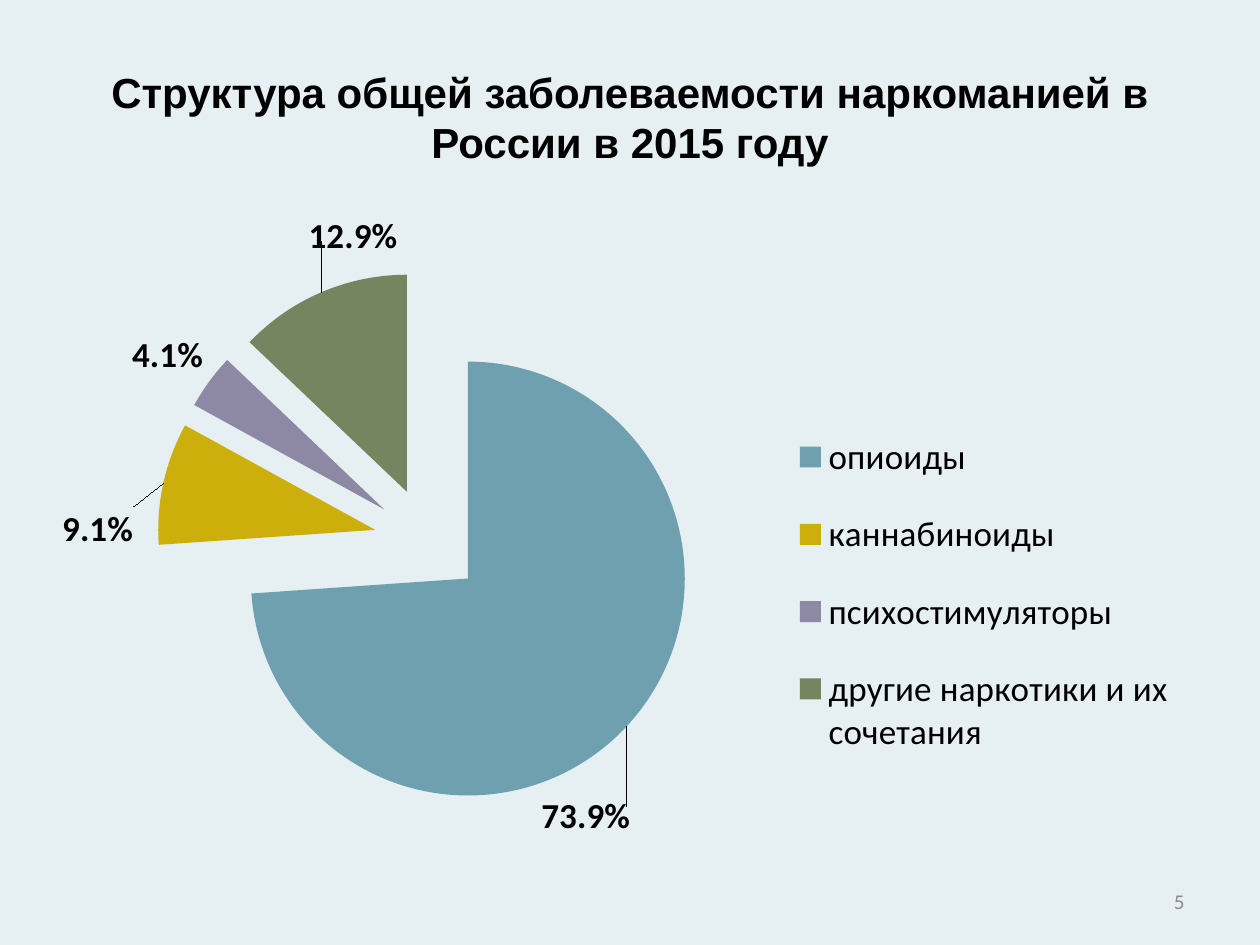
"""Build a slide with an exploded pie chart of drug addiction morbidity."""
from lxml.etree import SubElement
from pptx import Presentation
from pptx.chart.data import CategoryChartData as ChartData
from pptx.dml.color import RGBColor as Color
from pptx.enum.chart import XL_CHART_TYPE as ChartType
from pptx.enum.chart import XL_LABEL_POSITION as LabelPosition
from pptx.enum.chart import XL_LEGEND_POSITION as LegendPosition
from pptx.enum.text import MSO_ANCHOR as Anchor
from pptx.enum.text import PP_ALIGN as Align
from pptx.oxml.ns import qn
from pptx.util import Cm, Pt

TITLE = "Структура общей заболеваемости наркоманией в России в 2015 году"
PAGE = "5"
SLICES = [
    ("опиоиды", 0.739, "6EA0B0", (-0.08, 0.12)),
    ("каннабиноиды", 0.091, "CCAF0A", (-0.02, 0.11)),
    ("психостимуляторы", 0.041, "8D89A4", None),
    ("другие наркотики и их сочетания", 0.129, "748560", (0.07, -0.07)),
]
EXPLOSION = 25
PLOT_BOX = (0.09, 0.09, 0.48, 0.87)
LEGEND_BOX = (0.65, 0.3, 0.34, 0.62)
THEME = {
    "background": "E6EFF2",
    "title": {"name": "Arial", "size": Pt(24), "bold": True, "color": "000000"},
    "page": {"name": "Calibri", "size": Pt(12), "color": "8C8C8C"},
    "chart": {"name": "Calibri", "size": Pt(10), "color": "000000"},
    "label": {"name": "Calibri", "size": Pt(20), "bold": True, "color": "000000"},
    "legend": {"name": "Calibri", "size": Pt(20), "color": "000000"},
}
BOXES = {
    "title": (Cm(1.27), Cm(0.76), Cm(22.86), Cm(3.18)),
    "page": (Cm(18.2), Cm(17.65), Cm(5.93), Cm(1.02)),
    "chart": (Cm(1.09), Cm(4.32), Cm(22.86), Cm(12.57)),
}


def format_font(font, role):
    for name, value in THEME[role].items():
        if name == "color":
            font.color.rgb = Color.from_string(value)
        else:
            setattr(font, name, value)


def write_text(shape, text, role, align):
    shape.left, shape.top, shape.width, shape.height = BOXES[role]
    frame = shape.text_frame
    frame.word_wrap = True
    frame.vertical_anchor = Anchor.MIDDLE
    paragraph = frame.paragraphs[0]
    paragraph.alignment = align
    run = paragraph.add_run()
    run.text = text
    format_font(run.font, role)


def set_layout(element, previous, values):
    for old in element.findall(qn("c:layout")):
        element.remove(old)
    layout = SubElement(element, qn("c:layout"))
    manual = SubElement(layout, qn("c:manualLayout"))
    if len(values) == 4:
        if previous is None:
            SubElement(manual, qn("c:layoutTarget")).set("val", "inner")
        for mode in ("xMode", "yMode"):
            SubElement(manual, qn(f"c:{mode}")).set("val", "edge")
    for name, value in zip("xywh", values):
        SubElement(manual, qn(f"c:{name}")).set("val", str(value))
    position = 0 if previous is None else element.index(element.find(qn(previous))) + 1
    element.insert(position, layout)


def add_pie(slide):
    data = ChartData(number_format="0.0%")
    data.categories = [name for name, *_ in SLICES]
    data.add_series("Series 1", [share for _, share, *_ in SLICES])
    chart = slide.shapes.add_chart(ChartType.PIE, *BOXES["chart"], data).chart
    chart.has_title = False
    format_font(chart.font, "chart")
    chart.has_legend = True
    legend = chart.legend
    legend.position = LegendPosition.RIGHT
    legend.include_in_layout = False
    format_font(legend.font, "legend")
    set_layout(legend._element, "c:legendPos", LEGEND_BOX)
    set_layout(chart._chartSpace.chart.plotArea, None, PLOT_BOX)

    plot = chart.plots[0]
    plot.vary_by_categories = True
    series = plot.series[0]
    labels = series.data_labels
    settings = {"show_value": True, "number_format": "0.0%",
                "number_format_is_linked": False, "position": LabelPosition.OUTSIDE_END}
    for name, value in settings.items():
        setattr(labels, name, value)
    format_font(labels.font, "label")
    for index, (_, _, color, offset) in enumerate(SLICES):
        point = series.points[index]
        point.format.fill.solid()
        point.format.fill.fore_color.rgb = Color.from_string(color)
        if offset:
            label = point.data_label
            format_font(label.font, "label")
            label.position = LabelPosition.OUTSIDE_END
            entry = series._element.xpath(f"c:dLbls/c:dLbl[c:idx/@val='{index}']")[0]
            set_layout(entry, "c:idx", offset)
    explosion = SubElement(series._element, qn("c:explosion"))
    explosion.set("val", str(EXPLOSION))
    series._element.find(qn("c:dPt")).addprevious(explosion)
    label_list = series._element.find(qn("c:dLbls"))
    leader = label_list.find(qn("c:showLeaderLines"))
    if leader is None:
        leader = SubElement(label_list, qn("c:showLeaderLines"))
    leader.set("val", "1")


def main():
    presentation = Presentation()
    presentation.slide_width, presentation.slide_height = Cm(25.4), Cm(19.05)
    slide = presentation.slides.add_slide(presentation.slide_layouts[5])
    fill = slide.background.fill
    fill.solid()
    fill.fore_color.rgb = Color.from_string(THEME["background"])
    write_text(slide.shapes.title, TITLE, "title", Align.CENTER)
    write_text(slide.shapes.add_textbox(*BOXES["page"]), PAGE, "page", Align.RIGHT)
    add_pie(slide)
    presentation.save("out.pptx")


if __name__ == "__main__":
    main()
